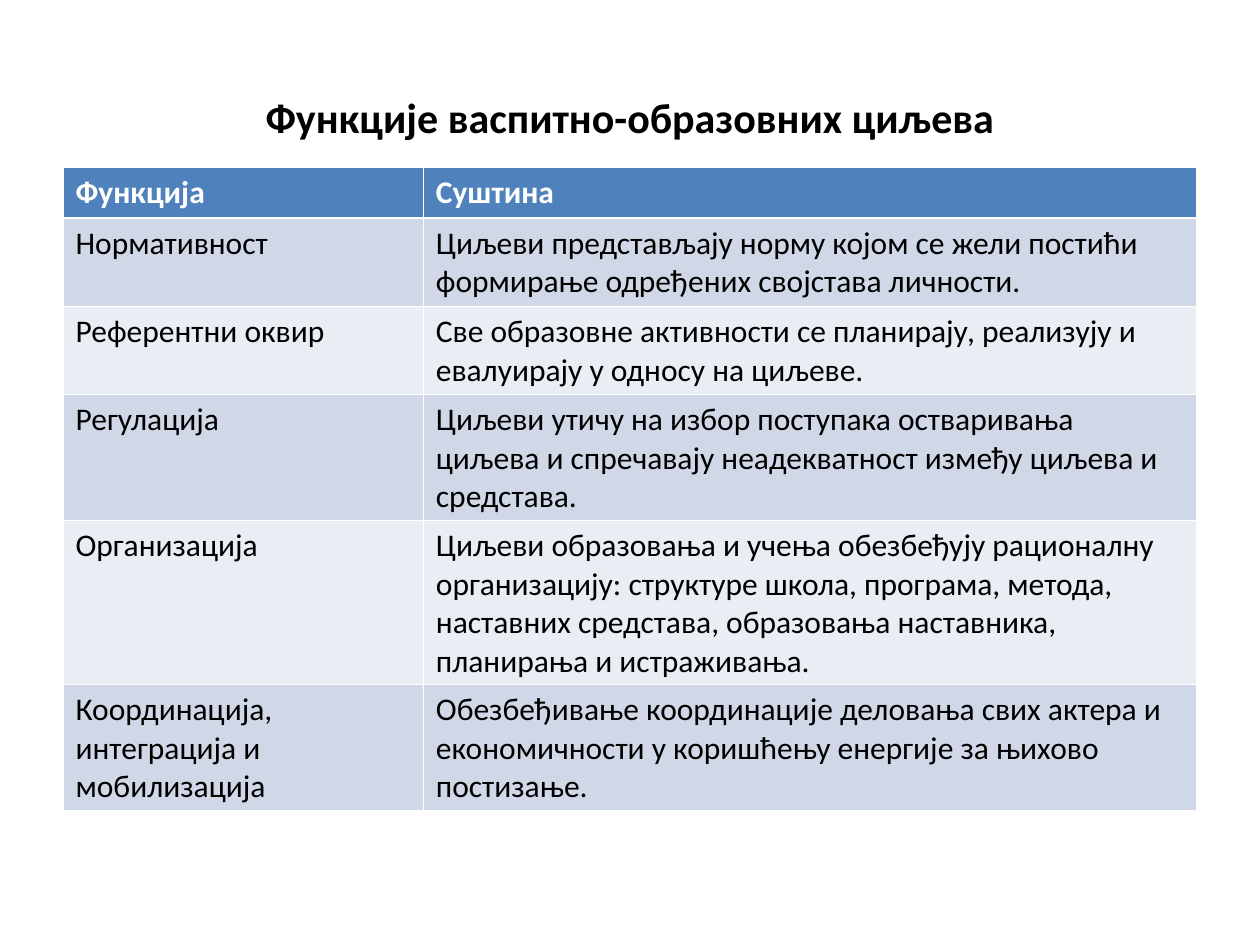
from pptx import Presentation
from pptx.dml.color import RGBColor
from pptx.enum.text import MSO_ANCHOR, PP_ALIGN
from pptx.util import Inches, Pt

MIDDLE = MSO_ANCHOR.MIDDLE
CENTER = PP_ALIGN.CENTER
FONT = "Calibri"
WIDTH, HEIGHT = Inches(10), Inches(7.5)
LEFT, SPAN = 0.05, 0.9  # shares of the slide width
COLS = (2.86, 6.14)
PAD, LINE = 0.1, 0.3  # row height in inches: padding plus lines of text
COLORS = {
    "text": "000000",
    "head": "4F81BD",
    "head_text": "FFFFFF",
    "odd": "D0D8E8",
    "even": "E9EDF4",
}
TITLE = "Функције васпитно-образовних циљева"
# Function, essence, lines of text in the row
ROWS = [
    ("Функција", "Суштина", 1),
    ("Нормативност",
     "Циљеви представљају норму којом се жели постићи формирање "
     "одређених својстава личности.", 2),
    ("Референтни оквир",
     "Све образовне активности се планирају, реализују и евалуирају "
     "у односу на циљеве.", 2),
    ("Регулација",
     "Циљеви утичу на избор поступака остваривања циљева и спречавају "
     "неадекватност између циљева и средстава.", 3),
    ("Организација",
     "Циљеви образовања и учења обезбеђују рационалну организацију: "
     "структуре школа, програма, метода, наставних средстава, "
     "образовања наставника, планирања и истраживања.", 4),
    ("Координација, интеграција и мобилизација",
     "Обезбеђивање координације деловања свих актера и економичности "
     "у коришћењу енергије за њихово постизање.", 3),
]


def color(name):
    return RGBColor.from_string(COLORS[name])


def put_text(frame, text, size, tint, bold):
    frame.text = text
    font = frame.paragraphs[0].runs[0].font
    font.name, font.size, font.bold = FONT, Pt(size), bold
    font.color.rgb = color(tint)


def add_title(slide):
    box = slide.shapes.add_textbox(
        int(WIDTH * LEFT), int(HEIGHT * 0.04), int(WIDTH * SPAN), Inches(1.25))
    frame = box.text_frame
    frame.word_wrap = True
    frame.vertical_anchor = MIDDLE
    put_text(frame, TITLE, 24, "text", True)
    frame.paragraphs[0].alignment = CENTER


def add_grid(slide):
    tall = [Inches(PAD + LINE * lines) for *_, lines in ROWS]
    table = slide.shapes.add_table(
        len(ROWS), len(COLS), int(WIDTH * LEFT), Inches(1.33),
        int(WIDTH * SPAN), sum(tall)).table
    for col, wide in zip(table.columns, COLS):
        col.width = Inches(wide)
    for i, (*texts, _) in enumerate(ROWS):
        table.rows[i].height = tall[i]
        head = i == 0
        fill = "head" if head else "odd" if i % 2 else "even"
        for cell, text in zip(table.rows[i].cells, texts):
            cell.fill.solid()
            cell.fill.fore_color.rgb = color(fill)
            put_text(cell.text_frame, text, 18,
                     "head_text" if head else "text", head)


def main():
    deck = Presentation()
    deck.slide_width, deck.slide_height = WIDTH, HEIGHT
    slide = deck.slides.add_slide(deck.slide_layouts[6])
    add_title(slide)
    add_grid(slide)
    deck.save("out.pptx")


if __name__ == "__main__":
    main()
